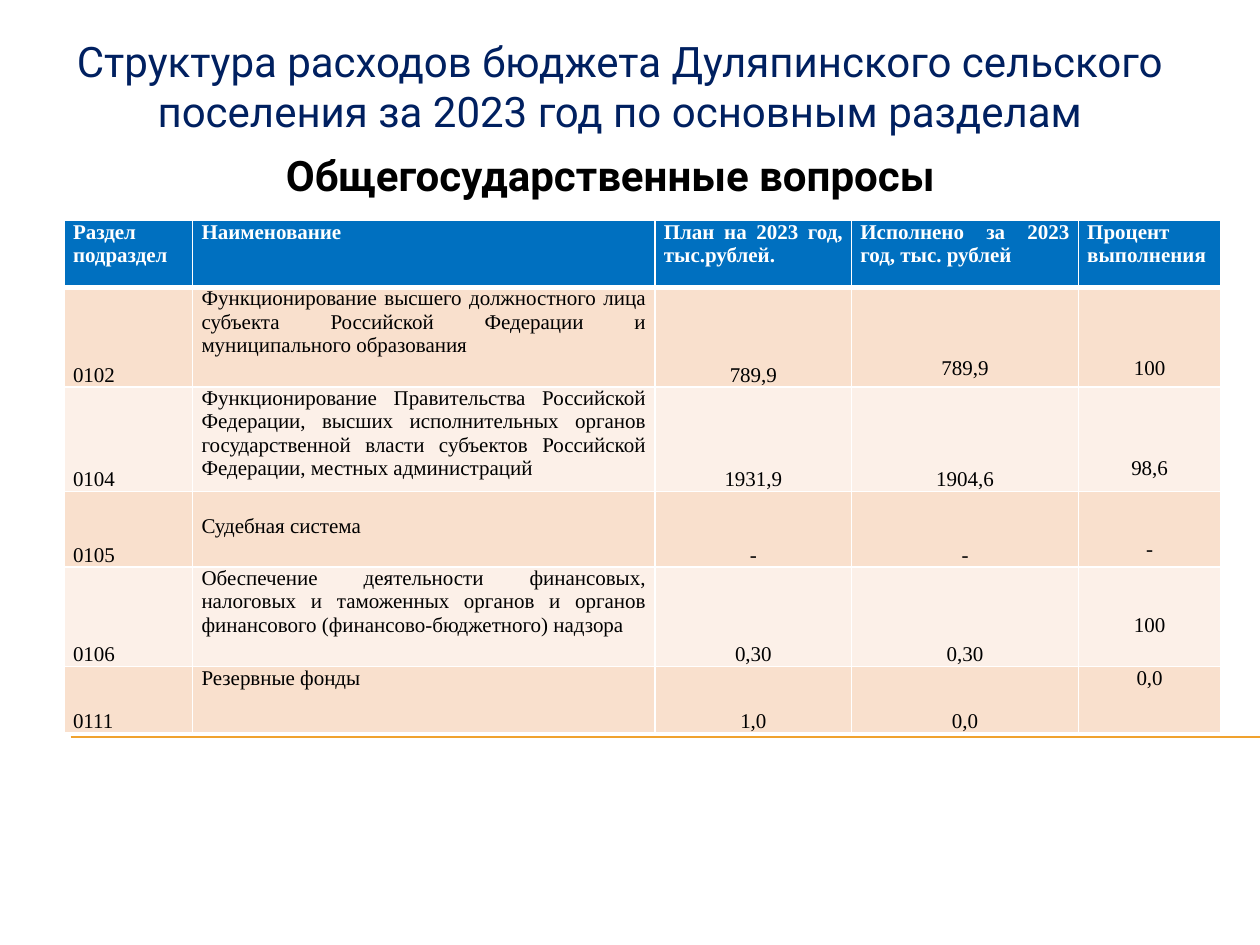
from lxml import etree
from pptx import Presentation
from pptx import util as u
from pptx.dml.color import RGBColor
from pptx.enum import shapes, text
from pptx.oxml import ns

NAVY = RGBColor(0x00, 0x20, 0x60)
BLUE = RGBColor(0x00, 0x70, 0xC0)
ORANGE = RGBColor(0xF0, 0xA2, 0x2E)
PEACH = RGBColor(0xF9, 0xE0, 0xCD)
CREAM = RGBColor(0xFC, 0xF0, 0xE8)
WHITE = RGBColor(0xFF, 0xFF, 0xFF)
BLACK = RGBColor(0x00, 0x00, 0x00)

HEADING_FONT = "Roboto"
TABLE_FONT = "Times New Roman"
LINE_HEIGHT = 0.185

COLUMN_WIDTHS = [1.02, 3.67, 1.56, 1.8, 1.13]
ROW_HEIGHTS = [0.53, 0.79, 0.83, 0.6, 0.79, 0.53]
ROWS = [
    ["Раздел подраздел", "Наименование", "План на 2023 год, тыс.рублей.",
     "Исполнено за 2023 год, тыс. рублей", "Процент\nвыполнения"],
    ["0102", "Функционирование высшего должностного лица субъекта Российской "
     "Федерации и муниципального образования", "789,9", "789,9", "100"],
    ["0104", "Функционирование Правительства Российской Федерации, высших "
     "исполнительных органов государственной власти субъектов Российской "
     "Федерации, местных администраций", "1931,9", "1904,6", "98,6"],
    ["0105", "Судебная система", "-", "-", "-"],
    ["0106", "Обеспечение деятельности финансовых, налоговых и таможенных "
     "органов и органов финансового (финансово-бюджетного) надзора",
     "0,30", "0,30", "100"],
    ["0111", "Резервные фонды", "1,0", "0,0", "0,0"],
]
LINES_ABOVE = {(1, 3): 3, (1, 4): 3, (2, 4): 3, (3, 1): 1, (3, 4): 2, (4, 4): 2}


def place(shape, left, top, width, height):
    """Move and size a shape, in inches."""
    shape.left, shape.top = u.Inches(left), u.Inches(top)
    shape.width, shape.height = u.Inches(width), u.Inches(height)


def write_heading(shape, wording, color, bold, alignment):
    """Write a heading into a title or text box."""
    frame = shape.text_frame
    frame.text = wording
    frame.word_wrap = True
    frame.auto_size = text.MSO_AUTO_SIZE.SHAPE_TO_FIT_TEXT
    frame.vertical_anchor = text.MSO_ANCHOR.TOP
    paragraph = frame.paragraphs[0]
    paragraph.alignment = alignment
    font = paragraph.font
    font.name, font.size, font.bold = HEADING_FONT, u.Pt(24), bold
    font.color.rgb = color


def add_rule(slide, left, top, width):
    """Draw the thin horizontal rule."""
    rule = slide.shapes.add_connector(
        shapes.MSO_CONNECTOR.STRAIGHT, u.Inches(left), u.Inches(top),
        u.Inches(left + width), u.Inches(top))
    rule.line.color.rgb = ORANGE
    rule.line.width = u.Pt(0.75)
    etree.SubElement(rule._element.spPr, ns.qn("a:effectLst"))


def set_borders(cell, widths):
    """Give a cell white borders, with widths in points by side."""
    properties = cell._tc.get_or_add_tcPr()
    for side, width in widths.items():
        line = etree.SubElement(properties, ns.qn(f"a:ln{side}"), w=str(u.Pt(width)))
        fill = etree.SubElement(line, ns.qn("a:solidFill"))
        etree.SubElement(fill, ns.qn("a:srgbClr"), val=str(WHITE))


def format_cell(cell, row, column):
    """Format a cell by its place in the table."""
    header = row == 0
    set_borders(cell, {"L": 1, "R": 1, "T": 3 if row == 1 else 1, "B": 3 if header else 1})
    cell.fill.solid()
    cell.fill.fore_color.rgb = BLUE if header else PEACH if row % 2 else CREAM
    cell.margin_left = cell.margin_right = u.Inches(0.07)
    cell.margin_top = u.Inches(LINES_ABOVE.get((row, column), 0) * LINE_HEIGHT)
    cell.margin_bottom = 0
    at_bottom = not header and column in (0, 2, 3) and (row, column) not in LINES_ABOVE
    cell.vertical_anchor = text.MSO_ANCHOR.BOTTOM if at_bottom else text.MSO_ANCHOR.TOP
    justified = header or column < 2
    for paragraph in cell.text_frame.paragraphs:
        paragraph.alignment = text.PP_ALIGN.JUSTIFY if justified else text.PP_ALIGN.CENTER
        font = paragraph.font
        font.name, font.size, font.bold = TABLE_FONT, u.Pt(12), header
        font.color.rgb = WHITE if header else BLACK


def add_budget_table(slide, left, top, width, height):
    """Add the table of spending by section."""
    table = slide.shapes.add_table(
        len(ROWS), len(COLUMN_WIDTHS), u.Inches(left), u.Inches(top),
        u.Inches(width), u.Inches(height)).table
    for column, column_width in zip(table.columns, COLUMN_WIDTHS):
        column.width = u.Inches(column_width)
    for row, row_height in zip(table.rows, ROW_HEIGHTS):
        row.height = u.Inches(row_height)
    for row, wordings in enumerate(ROWS):
        for column, wording in enumerate(wordings):
            cell = table.cell(row, column)
            cell.text_frame.text = wording
            format_cell(cell, row, column)


def main():
    """Build and save the presentation."""
    presentation = Presentation()
    presentation.slide_width, presentation.slide_height = u.Inches(10), u.Inches(7.5)
    slide = presentation.slides.add_slide(presentation.slide_layouts[5])
    add_rule(slide, 0.56, 5.85, 9.44)
    title = slide.shapes.title
    place(title, 0.43, 0.23, 8.98, 0.91)
    write_heading(title, "Структура расходов бюджета Дуляпинского сельского поселения "
                  "за 2023 год по основным разделам", NAVY, False, text.PP_ALIGN.CENTER)
    add_budget_table(slide, 0.51, 1.75, sum(COLUMN_WIDTHS), sum(ROW_HEIGHTS))
    subtitle = slide.shapes.add_textbox(0, 0, 0, 0)
    place(subtitle, 2.17, 1.14, 5.79, 0.5)
    write_heading(subtitle, "Общегосударственные вопросы", BLACK, True, text.PP_ALIGN.LEFT)
    presentation.save("out.pptx")


if __name__ == "__main__":
    main()
